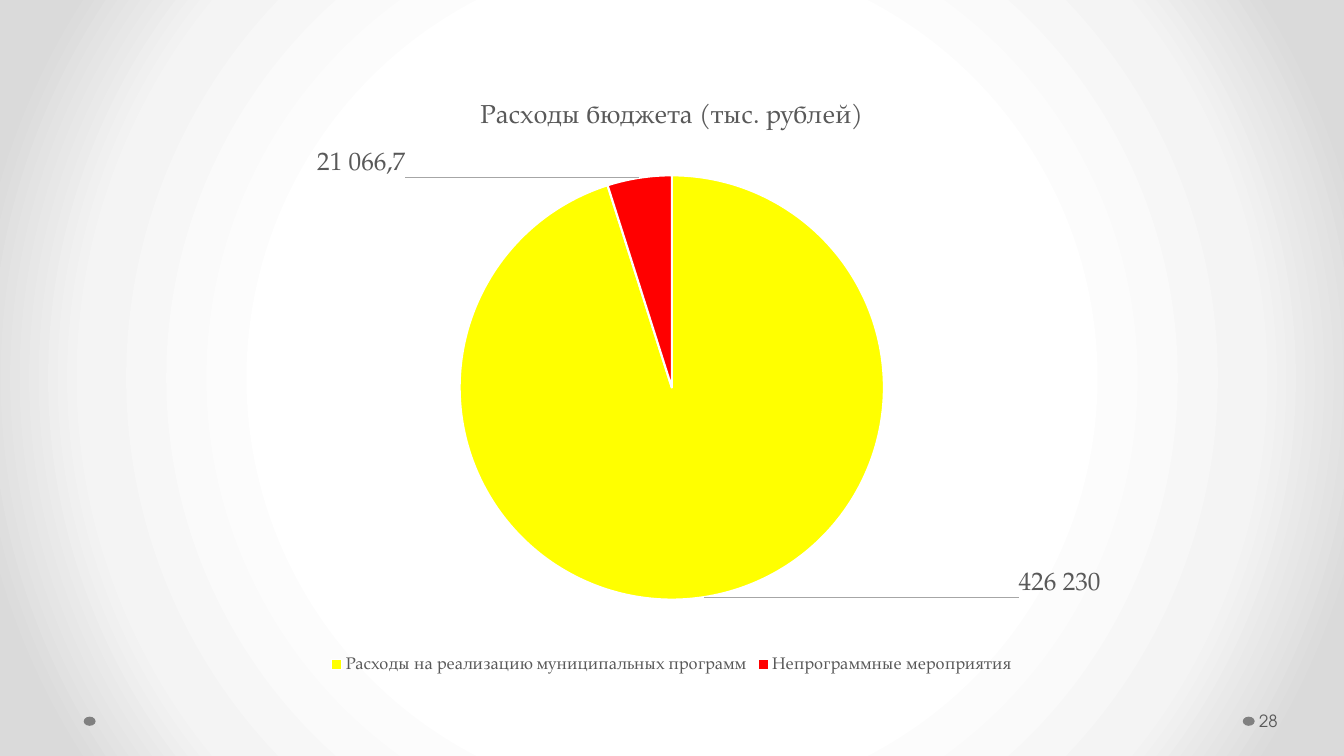
from lxml.etree import SubElement
from pptx import Presentation
from pptx.chart.data import CategoryChartData
from pptx.dml.color import RGBColor
from pptx.enum.chart import XL_CHART_TYPE, XL_LABEL_POSITION, XL_LEGEND_POSITION
from pptx.enum.shapes import MSO_SHAPE
from pptx.enum.text import MSO_ANCHOR
from pptx.oxml import parse_xml
from pptx.oxml.ns import nsdecls, qn
from pptx.util import Cm, Pt


def color(code):
    return RGBColor.from_string(code)


def assign(item, values):
    for name, value in values.items():
        setattr(item, name, value)


class Board:
    """Holds the style and the current slide."""
    serif, sans = "TeX Gyre Pagella", "TeX Gyre Adventor"
    ink, gray = "595959", "808080"

    def __init__(self, slide):
        self.slide = slide

    def style(self, font, face, size):
        assign(font, {"name": face, "size": Pt(size), "bold": False})
        font.color.rgb = color(self.ink)

    def back(self, stops):
        fill = self.slide.background.fill
        fill.solid()
        marks = "".join(f'<a:gs pos="{pos * 1000}"><a:srgbClr val="{code}"/></a:gs>'
                        for pos, code in stops)
        grad = parse_xml(
            f'<a:gradFill {nsdecls("a")} rotWithShape="1"><a:gsLst>{marks}</a:gsLst>'
            '<a:path path="circle"><a:fillToRect l="50000" t="50000" '
            'r="50000" b="50000"/></a:path></a:gradFill>')
        solid = next(self.slide.element.iter(qn("a:solidFill")))
        solid.getparent().replace(solid, grad)

    def dot(self, left, top):
        dot = self.slide.shapes.add_shape(
            MSO_SHAPE.OVAL, Cm(left), Cm(top), Cm(0.3), Cm(0.23))
        dot.shadow.inherit = False
        dot.fill.solid()
        dot.fill.fore_color.rgb = color(self.gray)
        dot.line.fill.background()

    def text(self, words, left, top, width, height):
        frame = self.slide.shapes.add_textbox(
            Cm(left), Cm(top), Cm(width), Cm(height)).text_frame
        assign(frame, {"word_wrap": True, "vertical_anchor": MSO_ANCHOR.MIDDLE,
                       "margin_left": Cm(0.08), "margin_right": Cm(0.13)})
        run = frame.paragraphs[0].add_run()
        run.text = words
        self.style(run.font, self.sans, 12)

    def layout(self, values):
        items = "".join(f'<c:{key} val="{val}"/>' for key, val in values.items())
        return parse_xml(f'<c:layout {nsdecls("c")}><c:manualLayout>{items}'
                         '</c:manualLayout></c:layout>')

    def pie(self, title, rows, left, top, width, height):
        data = CategoryChartData()
        data.categories = [row[0] for row in rows]
        data.add_series("Series 1", [row[1] for row in rows])
        chart = self.slide.shapes.add_chart(
            XL_CHART_TYPE.PIE, Cm(left), Cm(top), Cm(width), Cm(height), data).chart
        self.style(chart.font, self.serif, 10)

        # Title and legend
        chart.has_title = chart.has_legend = True
        run = chart.chart_title.text_frame.paragraphs[0].add_run()
        run.text = title
        self.style(run.font, self.serif, 18.6)
        assign(chart.legend, {"position": XL_LEGEND_POSITION.BOTTOM,
                              "include_in_layout": False})
        self.style(chart.legend.font, self.serif, 12)

        # Plot area
        plot = chart.plots[0]
        plot.vary_by_categories = True
        area = chart._chartSpace.chart.plotArea
        for old in area.findall(qn("c:layout")):
            area.remove(old)
        area.insert(0, self.layout({
            "layoutTarget": "inner", "xMode": "edge", "yMode": "edge",
            "x": 0.26, "y": 0.16, "w": 0.48, "h": 0.71}))

        # Slices with their labels
        series = plot.series[0]
        labels = series.data_labels
        assign(labels, {"show_value": True, "position": XL_LABEL_POSITION.OUTSIDE_END})
        self.style(labels.font, self.serif, 18)
        for i, (_, _, code, words, right, down) in enumerate(rows):
            point = series.points[i]
            point.format.fill.solid()
            point.format.fill.fore_color.rgb = color(code)
            point.format.line.color.rgb = color("FFFFFF")
            point.format.line.width = Pt(1.5)
            label = point.data_label
            run = label.text_frame.paragraphs[0].add_run()
            run.text = words
            self.style(run.font, self.serif, 18)
            label.position = XL_LABEL_POSITION.OUTSIDE_END
            mark = labels._element.findall(qn("c:dLbl"))[i]
            mark.insert(1, self.layout({"x": right, "y": down}))

        # Leader lines
        group = labels._element
        for old in group.findall(qn("c:showLeaderLines")):
            group.remove(old)
        SubElement(group, qn("c:showLeaderLines")).set("val", "1")
        group.append(parse_xml(
            f'<c:leaderLines {nsdecls("c", "a")}><c:spPr><a:ln w="9525"><a:solidFill>'
            '<a:srgbClr val="A6A6A6"/></a:solidFill></a:ln></c:spPr></c:leaderLines>'))


def main():
    deck = Presentation()
    assign(deck, {"slide_width": Cm(33.87), "slide_height": Cm(19.05)})
    board = Board(deck.slides.add_slide(deck.slide_layouts[6]))

    # Background and footer
    board.back([(50, "FFFFFF"), (76, "F4F4F4"), (92, "DADADA")])
    for left in (31.32, 2.11):
        board.dot(left, 18.06)
    board.text("28", 31.65, 17.65, 2.08, 1.02)

    # Budget chart: name, value, colour, label, label shift
    rows = [
        ("Расходы на реализацию муниципальных программ", 401588.2, "FFFF00",
         "426 230", 0.35, -0.05),
        ("Непрограммные мероприятия", 20673.2, "FF0000", "21 066,7", -0.26, 0.01),
    ]
    board.pie("Расходы бюджета (тыс. рублей)", rows, 5.64, 2.01, 22.58, 15.06)
    deck.save("out.pptx")


if __name__ == "__main__":
    main()
